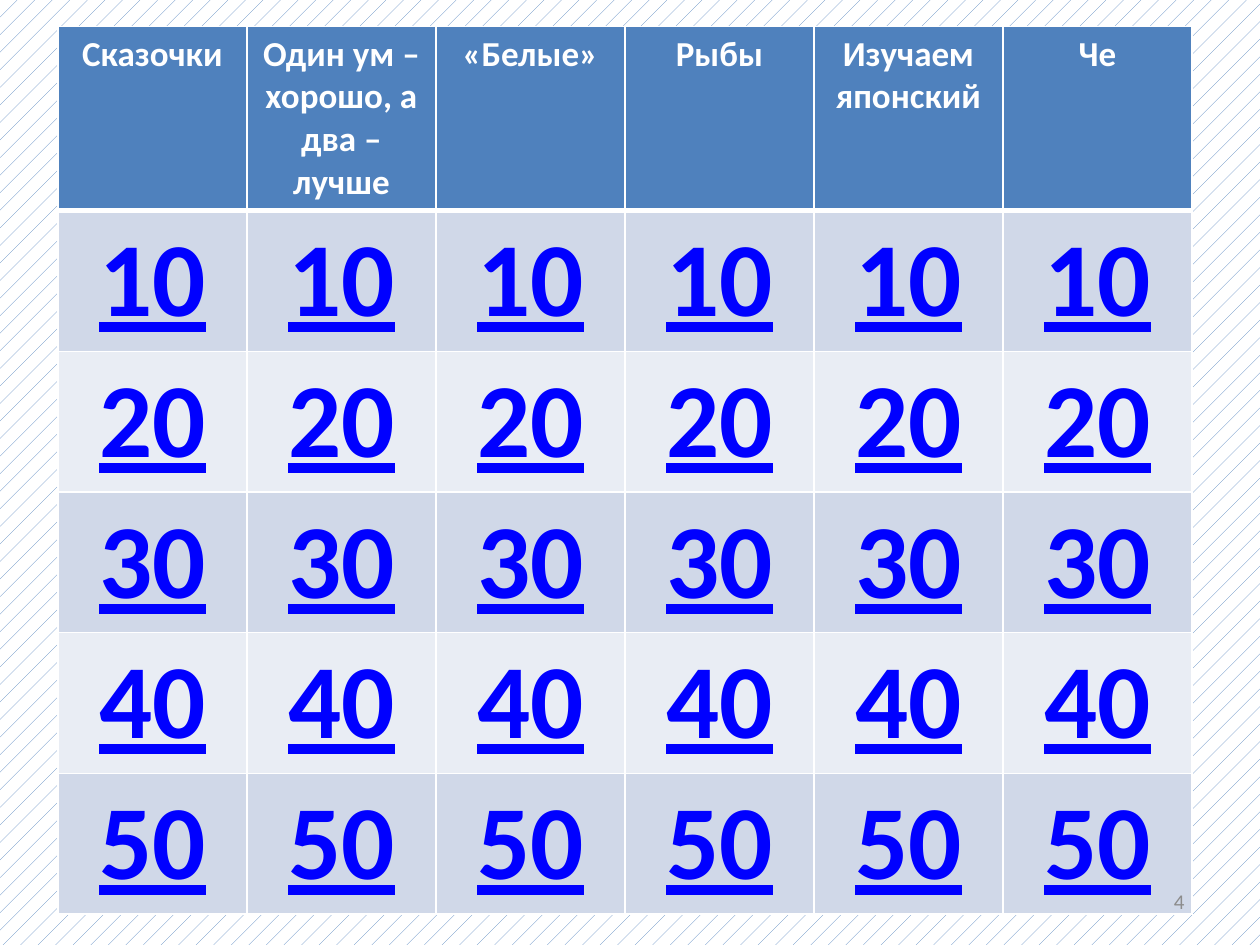
from lxml.etree import SubElement
from pptx import Presentation
from pptx.dml.color import RGBColor
from pptx.enum.dml import MSO_PATTERN
from pptx.enum.text import MSO_ANCHOR, PP_ALIGN
from pptx.oxml.ns import qn
from pptx.util import Inches, Pt

TOPICS = ["Сказочки", "Один ум – хорошо, а два – лучше", "«Белые»",
          "Рыбы", "Изучаем японский", "Че"]
POINTS = ["10", "20", "30", "40", "50"]
PAGE_NUMBER = "4"

FONT = "Calibri"
WHITE = RGBColor(0xFF, 0xFF, 0xFF)
BLUE = RGBColor(0x4F, 0x81, 0xBD)
LINK_BLUE = RGBColor(0x00, 0x00, 0xFF)
BANDS = [RGBColor(0xD0, 0xD8, 0xE8), RGBColor(0xE9, 0xED, 0xF4)]
GRAY = RGBColor(0x8C, 0x8C, 0x8C)

COLUMN_WIDTH = Inches(1.5)
HEADER_HEIGHT = Inches(1.45)
POINTS_HEIGHT = Inches(1.11)


def write(frame, text, size, color, align, bold=False, underline=False):
    para = frame.paragraphs[0]
    para.alignment = align
    span = para.add_run()
    span.text = text
    font = span.font
    font.name, font.size, font.bold = FONT, Pt(size), bold
    font.underline = underline
    font.color.rgb = color


def add_borders(cell, top, bottom):
    properties = cell._tc.get_or_add_tcPr()
    for side, width in (("L", 1), ("R", 1), ("T", top), ("B", bottom)):
        line = SubElement(properties, qn(f"a:ln{side}"), w=str(Pt(width)))
        fill = SubElement(line, qn("a:solidFill"))
        SubElement(fill, qn("a:srgbClr"), val=str(WHITE))


def paint_cell(cell, fill, top=1, bottom=1):
    add_borders(cell, top, bottom)
    cell.fill.solid()
    cell.fill.fore_color.rgb = fill


def add_board(page):
    rows, columns = len(POINTS) + 1, len(TOPICS)
    height = HEADER_HEIGHT + POINTS_HEIGHT * len(POINTS)
    table = page.shapes.add_table(rows, columns, Inches(0.46), Inches(0.21),
                                  COLUMN_WIDTH * columns, height).table
    for row in table.rows:
        row.height = POINTS_HEIGHT
    table.rows[0].height = HEADER_HEIGHT
    for column, topic in enumerate(TOPICS):
        table.columns[column].width = COLUMN_WIDTH
        header = table.cell(0, column)
        paint_cell(header, BLUE, bottom=3)
        write(header.text_frame, topic, 20, WHITE, PP_ALIGN.CENTER, bold=True)
        for index, points in enumerate(POINTS):
            cell = table.cell(index + 1, column)
            paint_cell(cell, BANDS[index % 2], top=3 if index == 0 else 1)
            write(cell.text_frame, points, 60, LINK_BLUE, PP_ALIGN.CENTER,
                  bold=True, underline=True)


def add_page_number(page):
    box = page.shapes.add_textbox(Inches(7.17), Inches(6.95), Inches(2.33), Inches(0.4))
    frame = box.text_frame
    frame.word_wrap = True
    frame.vertical_anchor = MSO_ANCHOR.MIDDLE
    write(frame, PAGE_NUMBER, 12, GRAY, PP_ALIGN.RIGHT)


def main():
    deck = Presentation()
    deck.slide_width, deck.slide_height = Inches(10), Inches(7.5)
    page = deck.slides.add_slide(deck.slide_layouts[6])
    backdrop = page.background.fill
    backdrop.patterned()
    backdrop.pattern = MSO_PATTERN.PERCENT_5
    backdrop.fore_color.rgb = BLUE
    backdrop.back_color.rgb = WHITE
    add_board(page)
    add_page_number(page)
    deck.save("out.pptx")


if __name__ == "__main__":
    main()
